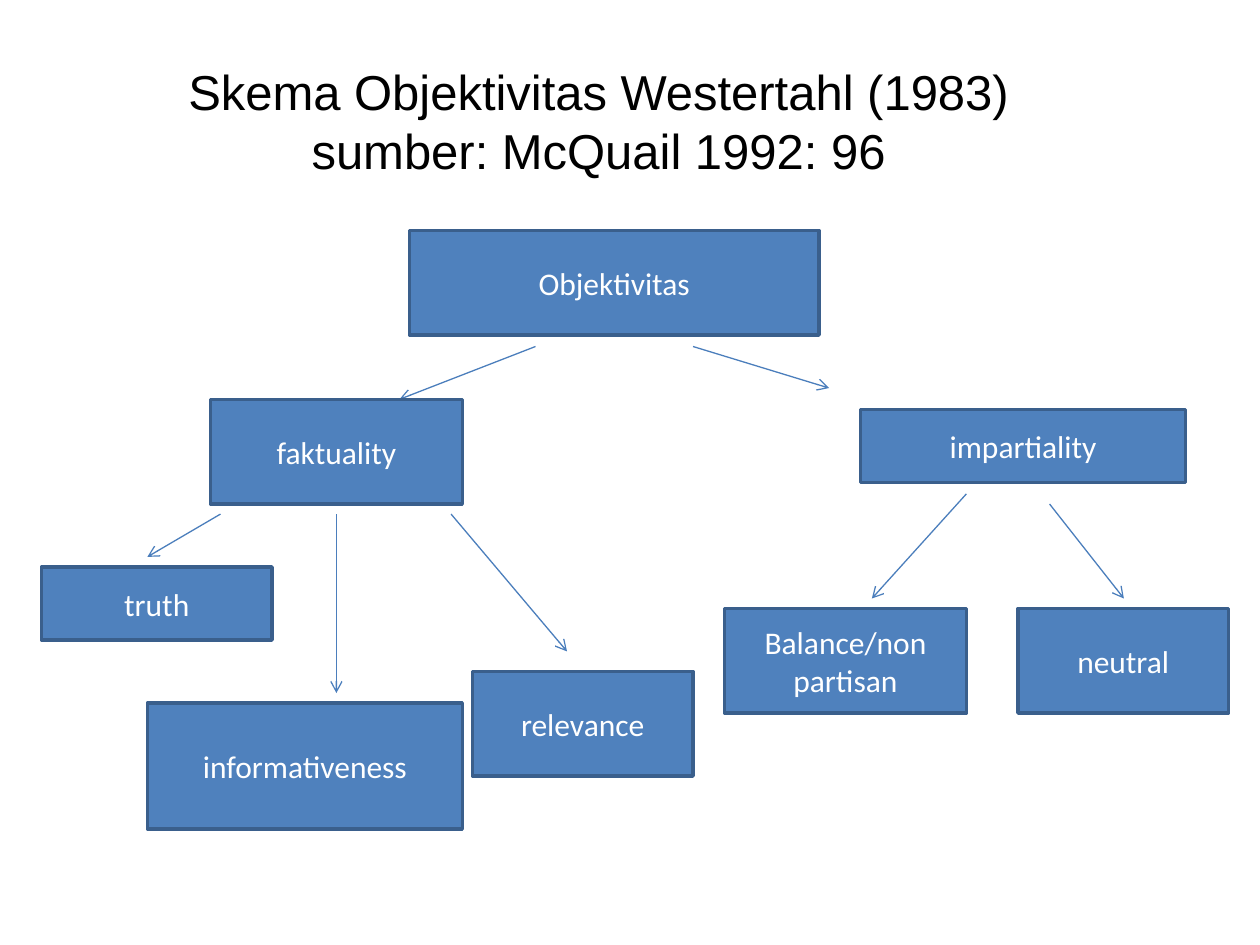
from dataclasses import dataclass

from lxml.etree import SubElement
from pptx import Presentation
from pptx.dml.color import RGBColor as RGB
from pptx.enum.shapes import MSO_CONNECTOR as Conn, MSO_SHAPE as Shape
from pptx.enum.text import MSO_ANCHOR as Anchor, MSO_AUTO_SIZE as AutoSize, PP_ALIGN as Align
from pptx.oxml.ns import qn
from pptx.util import Inches, Pt


@dataclass(frozen=True)
class Theme:
    title_font: str = "Arial"
    box_font: str = "Calibri"
    title_size: int = 28
    box_size: int = 18
    title_color: str = "000000"
    box_text: str = "FFFFFF"
    box_fill: str = "4F81BD"
    box_line: str = "3A5F8C"
    arrow: str = "4B7EBC"
    box_width: float = 2
    arrow_width: float = 0.75


class Diagram:
    def __init__(self, slide, theme):
        self.s = slide
        self.theme = theme

    def _format(self, tf, font, size, color):
        tf.word_wrap = True
        tf.vertical_anchor = Anchor.MIDDLE
        for p in tf.paragraphs:
            p.alignment = Align.CENTER
            for r in p.runs:
                r.font.name = font
                r.font.size = Pt(size)
                r.font.color.rgb = RGB.from_string(color)

    def title(self, text, x, y, w, h):
        t = self.theme
        sp = self.s.shapes.title
        sp.left, sp.top, sp.width, sp.height = map(Inches, (x, y, w, h))
        tf = sp.text_frame
        tf.text = text
        tf.auto_size = AutoSize.NONE
        self._format(tf, t.title_font, t.title_size, t.title_color)
        # A line break has its own type size, which sets the line height.
        for br in tf.paragraphs[0]._p.findall(qn("a:br")):
            SubElement(br, qn("a:rPr"), sz=str(t.title_size * 100))

    def box(self, text, x, y, w, h):
        t = self.theme
        sp = self.s.shapes.add_shape(Shape.RECTANGLE, *map(Inches, (x, y, w, h)))
        sp.shadow.inherit = False
        sp.fill.solid()
        sp.fill.fore_color.rgb = RGB.from_string(t.box_fill)
        sp.line.color.rgb = RGB.from_string(t.box_line)
        sp.line.width = Pt(t.box_width)
        sp.text_frame.text = text
        self._format(sp.text_frame, t.box_font, t.box_size, t.box_text)

    def arrow(self, x1, y1, x2, y2):
        t = self.theme
        cx = self.s.shapes.add_connector(Conn.STRAIGHT, *map(Inches, (x1, y1, x2, y2)))
        cx.line.color.rgb = RGB.from_string(t.arrow)
        cx.line.width = Pt(t.arrow_width)
        SubElement(cx.line._get_or_add_ln(), qn("a:tailEnd"), type="arrow")
        SubElement(cx._element.spPr, qn("a:effectLst"))


ARROWS = [
    # Objektivitas to its two branches
    (4.25, 2.75, 3.17, 3.17),
    (5.5, 2.75, 6.58, 3.08),
    # faktuality to its three parts
    (1.75, 4.08, 1.17, 4.42),
    (2.67, 4.08, 2.67, 5.5),
    (3.58, 4.08, 4.5, 5.17),
    # impartiality to its two parts
    (7.67, 3.92, 6.92, 4.75),
    (8.33, 4, 8.92, 4.75),
]

BOXES = [
    ("Objektivitas", 3.25, 1.83, 3.25, 0.83),
    ("faktuality", 1.67, 3.17, 2, 0.83),
    ("impartiality", 6.83, 3.25, 2.58, 0.58),
    ("truth", 0.33, 4.5, 1.83, 0.58),
    ("informativeness", 1.17, 5.58, 2.5, 1),
    ("relevance", 3.75, 5.33, 1.75, 0.83),
    ("Balance/non partisan", 5.75, 4.83, 1.92, 0.83),
    ("neutral", 8.08, 4.83, 1.67, 0.83),
]


def main():
    prs = Presentation()
    prs.slide_width, prs.slide_height = Inches(10), Inches(7.5)
    title_only = prs.slide_layouts[5]
    diagram = Diagram(prs.slides.add_slide(title_only), Theme())

    diagram.title("Skema Objektivitas Westertahl (1983)\vsumber: McQuail 1992: 96",
                  0.25, 0.33, 9, 1.25)
    for ends in ARROWS:
        diagram.arrow(*ends)
    for text, *place in BOXES:
        diagram.box(text, *place)

    prs.save("out.pptx")


if __name__ == "__main__":
    main()
